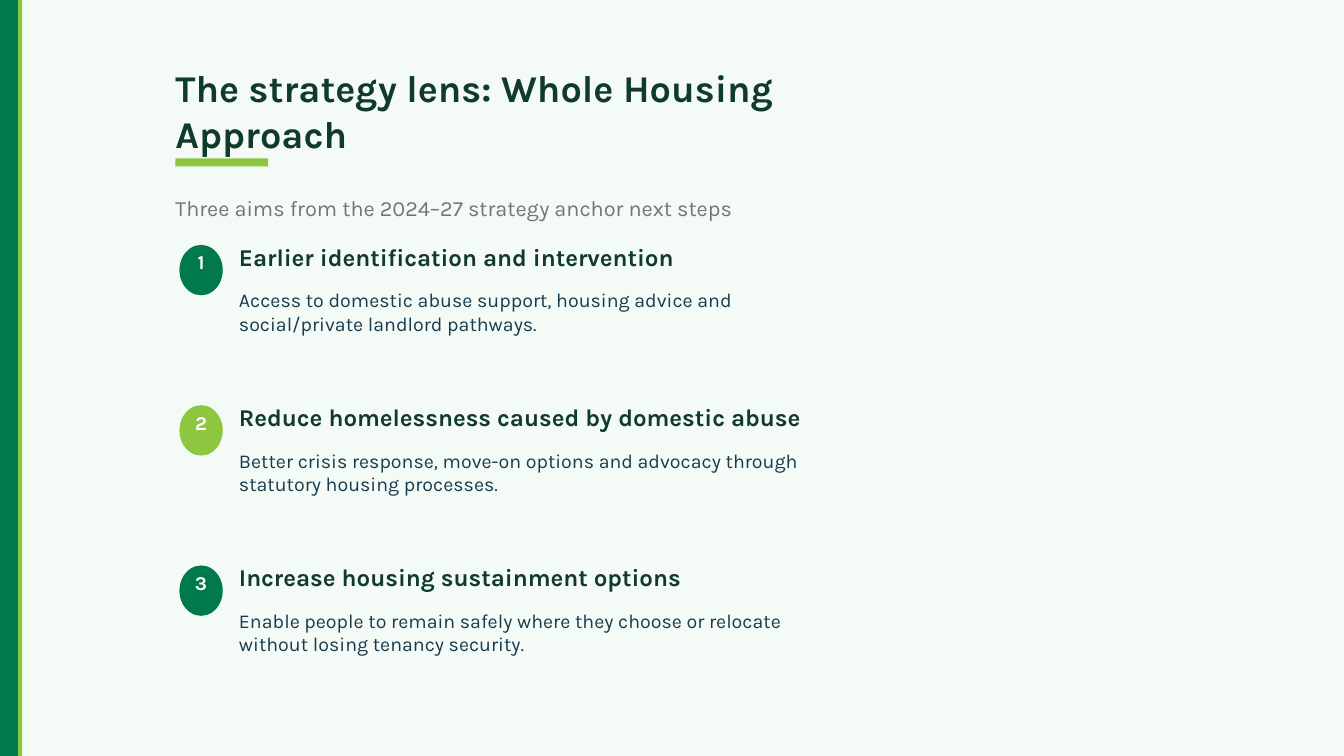
"""Build the Whole Housing Approach strategy slide."""
from dataclasses import dataclass

import pptx
import pptx.dml.color
import pptx.enum.shapes
import pptx.enum.text
import pptx.shapes.base
import pptx.slide
import pptx.util

Inches = pptx.util.Inches
Anchor = pptx.enum.text.MSO_ANCHOR
Align = pptx.enum.text.PP_ALIGN
Preset = pptx.enum.shapes.MSO_SHAPE


@dataclass(frozen=True)
class Theme:
    font: str = "Karla"
    background: str = "F4FBF7"
    green: str = "007A4D"
    lime: str = "8DC63F"
    heading: str = "103B2A"
    subtitle: str = "6D7875"
    body: str = "183B4D"
    white: str = "FFFFFF"
    title_size: float = 27
    subtitle_size: float = 15.5
    heading_size: float = 17.2
    body_size: float = 14


@dataclass(frozen=True)
class Box:
    left: float
    top: float
    width: float
    height: float


@dataclass(frozen=True)
class Aim:
    heading: str
    detail: str
    badge_color: str


THEME = Theme()
FIRST_AIM_TOP = 2.37
AIM_PITCH = 1.59
AIMS = [
    Aim("Earlier identification and intervention",
        "Access to domestic abuse support, housing advice and social/private landlord pathways.",
        THEME.green),
    Aim("Reduce homelessness caused by domestic abuse",
        "Better crisis response, move-on options and advocacy through statutory housing processes.",
        THEME.lime),
    Aim("Increase housing sustainment options",
        "Enable people to remain safely where they choose or relocate without losing tenancy security.",
        THEME.green),
]


def place(shape: pptx.shapes.base.BaseShape, box: Box) -> None:
    shape.left, shape.top = Inches(box.left), Inches(box.top)
    shape.width, shape.height = Inches(box.width), Inches(box.height)


def write_text(shape: pptx.shapes.base.BaseShape, text: str, *, size: float, color: str,
               bold: bool = False, align: Align = Align.LEFT,
               anchor: Anchor = Anchor.MIDDLE) -> None:
    frame = shape.text_frame
    frame.word_wrap = True
    frame.auto_size = pptx.enum.text.MSO_AUTO_SIZE.NONE
    frame.vertical_anchor = anchor
    frame.margin_left = frame.margin_right = frame.margin_top = frame.margin_bottom = 0
    frame.text = text
    paragraph = frame.paragraphs[0]
    paragraph.alignment = align
    font = paragraph.runs[0].font
    font.name, font.size, font.bold = THEME.font, pptx.util.Pt(size), bold
    font.color.rgb = pptx.dml.color.RGBColor.from_string(color)


def add_text(slide: pptx.slide.Slide, box: Box, text: str, **text_format) -> None:
    shape = slide.shapes.add_textbox(0, 0, 0, 0)
    place(shape, box)
    write_text(shape, text, **text_format)


def add_filled(slide: pptx.slide.Slide, box: Box, color: str,
               preset: Preset = Preset.RECTANGLE) -> None:
    shape = slide.shapes.add_shape(preset, 0, 0, 0, 0)
    place(shape, box)
    shape.shadow.inherit = False
    shape.fill.solid()
    shape.fill.fore_color.rgb = pptx.dml.color.RGBColor.from_string(color)
    shape.line.fill.background()


def add_aim(slide: pptx.slide.Slide, number: int, aim: Aim) -> None:
    top = FIRST_AIM_TOP + (number - 1) * AIM_PITCH
    add_filled(slide, Box(1.78, top + 0.06, 0.43, 0.5), aim.badge_color, Preset.OVAL)
    add_text(slide, Box(1.78, top + 0.09, 0.43, 0.28), str(number), size=THEME.body_size,
             color=THEME.white, bold=True, align=Align.CENTER)
    add_text(slide, Box(2.37, top, 5.75, 0.35), aim.heading, size=THEME.heading_size,
             color=THEME.heading, bold=True)
    add_text(slide, Box(2.37, top + 0.49, 5.65, 0.49), aim.detail, size=THEME.body_size,
             color=THEME.body, anchor=Anchor.TOP)


def main() -> None:
    presentation = pptx.Presentation()
    presentation.slide_width, presentation.slide_height = Inches(13.33), Inches(7.5)
    slide = presentation.slides.add_slide(presentation.slide_layouts.get_by_name("Title Only"))
    slide.background.fill.solid()
    slide.background.fill.fore_color.rgb = pptx.dml.color.RGBColor.from_string(THEME.background)

    add_filled(slide, Box(0, 0, 0.18, 7.5), THEME.green)
    add_filled(slide, Box(0.18, 0, 0.04, 7.5), THEME.lime)
    place(slide.shapes.title, Box(1.74, 0.66, 6.65, 0.87))
    write_text(slide.shapes.title, "The strategy lens: Whole Housing Approach",
               size=THEME.title_size, color=THEME.heading, bold=True)
    add_filled(slide, Box(1.74, 1.57, 0.92, 0.08), THEME.lime)
    add_text(slide, Box(1.74, 1.8, 6.35, 0.53),
             "Three aims from the 2024–27 strategy anchor next steps",
             size=THEME.subtitle_size, color=THEME.subtitle)
    for number, aim in enumerate(AIMS, start=1):
        add_aim(slide, number, aim)

    presentation.save("out.pptx")


if __name__ == "__main__":
    main()
